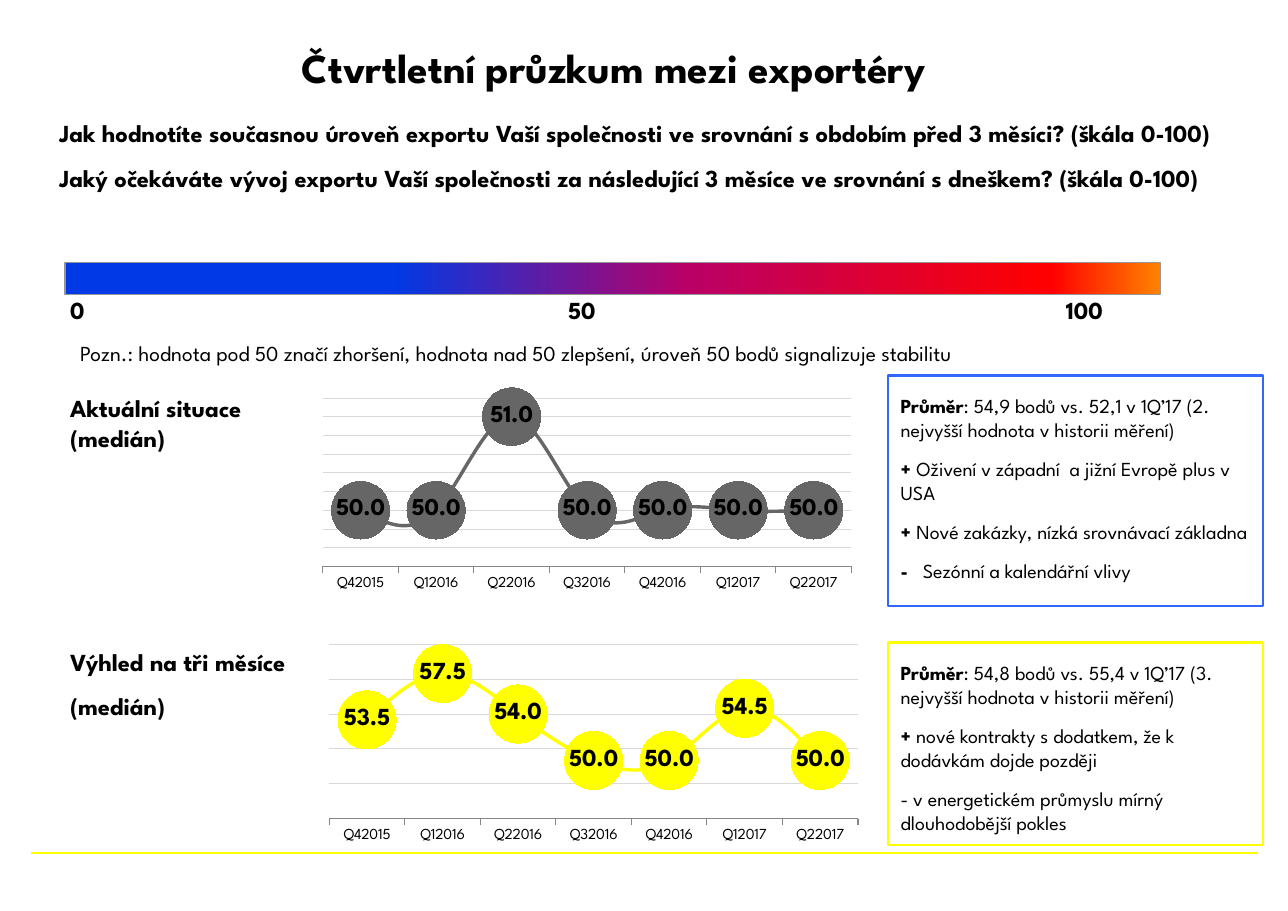
from lxml import etree
from pptx import Presentation
from pptx.chart.data import CategoryChartData
from pptx.dml.color import RGBColor
from pptx.enum import chart as charts, shapes, text
from pptx.oxml import parse_xml
from pptx.oxml.ns import nsdecls, qn
from pptx.util import Cm, Pt

FONT = "League Spartan"
BLACK = RGBColor(0x00, 0x00, 0x00)
YELLOW = RGBColor(0xFF, 0xFF, 0x00)
BLUE = RGBColor(0x33, 0x66, 0xFF)
GREY = RGBColor(0x66, 0x66, 0x66)
SCALE_BORDER = RGBColor(0x96, 0x96, 0x96)
GRID = RGBColor(0xD9, 0xD9, 0xD9)
AXIS = RGBColor(0x86, 0x86, 0x86)
SCALE_STOPS = [(30, "0039E5"), (57, "BA0066"), (90, "FF0000"), (100, "FF8200")]


def write(frame, paragraphs, size, tabs=()):
    frame.word_wrap = True
    frame.vertical_anchor = text.MSO_ANCHOR.TOP
    frame.margin_left = frame.margin_right = Cm(0.3)
    frame.margin_top, frame.margin_bottom = Cm(0.41), 0
    for i, parts in enumerate(paragraphs):
        paragraph = frame.add_paragraph() if i else frame.paragraphs[0]
        paragraph.alignment = text.PP_ALIGN.LEFT
        paragraph.space_before = Pt(10 if i else 0)
        if tabs:
            stops = etree.SubElement(paragraph._p.get_or_add_pPr(), qn("a:tabLst"))
            for tab in tabs:
                etree.SubElement(stops, qn("a:tab"), pos=str(Cm(tab)), algn="l")
        paragraph.font.name = FONT
        paragraph.font.size = Pt(size)
        paragraph.font.color.rgb = BLACK
        for words, bold in parts:
            run = paragraph.add_run()
            run.text = words
            run.font.bold = bold


def add_text(left, top, width, height, paragraphs, size, tabs=()):
    box = slide.shapes.add_textbox(Cm(left), Cm(top), Cm(width), Cm(height))
    write(box.text_frame, paragraphs, size, tabs)


prs = Presentation()
prs.slide_width, prs.slide_height = Cm(29.7), Cm(21)
slide = prs.slides.add_slide(prs.slide_layouts[5])

title = slide.shapes.title
title.left, title.top, title.width, title.height = Cm(6.96), Cm(0.48), Cm(21.56), Cm(2.11)
write(title.text_frame, [[("Čtvrtletní průzkum mezi exportéry", True)]], 27)
title.text_frame.vertical_anchor = text.MSO_ANCHOR.MIDDLE
title.text_frame.margin_left = title.text_frame.margin_right = title.text_frame.margin_top = 0

footer = slide.shapes.add_connector(
    shapes.MSO_CONNECTOR.STRAIGHT, Cm(0.71), Cm(19.66), Cm(29), Cm(19.66))
footer.line.color.rgb = YELLOW
footer.line.width = Pt(1)
etree.SubElement(footer._element.spPr, qn("a:effectLst"))

add_text(1.07, 2.31, 27.58, 3.73, [
    [("Jak hodnotíte současnou úroveň exportu Vaší společnosti ve srovnání s obdobím před 3 měsíci? (škála 0-100)", True)],
    [("Jaký očekáváte vývoj exportu Vaší společnosti za následující 3 měsíce ve srovnání s dneškem? (škála 0-100)", True)],
], 16)

scale = slide.shapes.add_shape(
    shapes.MSO_SHAPE.RECTANGLE, Cm(1.5), Cm(6.05), Cm(25.25), Cm(0.74))
scale.shadow.inherit = False
scale.line.color.rgb = SCALE_BORDER
scale.line.width = Pt(0.75)
scale.fill.gradient()
scale.fill.gradient_angle = 0
stop_list = scale._element.spPr.find(".//" + qn("a:gsLst"))
for stop in list(stop_list):
    stop_list.remove(stop)
for percent, colour in SCALE_STOPS:
    stop = etree.SubElement(stop_list, qn("a:gs"), pos=str(percent * 1000))
    etree.SubElement(stop, qn("a:srgbClr"), val=colour)

add_text(1.32, 6.4, 27.25, 1.5, [[("0\t50\t100", True)]], 16, tabs=(11.48, 22.96))
add_text(1.55, 7.44, 27.5, 1.14, [
    [("Pozn.: hodnota pod 50 značí zhoršení, hodnota nad 50 zlepšení, úroveň 50 bodů signalizuje stabilitu", False)],
], 14)

add_text(1.32, 8.66, 6.25, 2, [[("Aktuální situace (medián)", True)]], 16)
add_text(1.32, 14.5, 6.25, 2.4, [[("Výhled na tři měsíce", True)], [("(medián)", True)]], 16)

comments = [
    (8.66, 5.31, BLUE, [
        [("Průměr", True), (": 54,9 bodů vs. 52,1 v 1Q’17 (2. nejvyšší hodnota v historii měření)", False)],
        [("+ ", True), ("Oživení v západní  a jižní Evropě plus v USA", False)],
        [("+ ", True), ("Nové zakázky, nízká srovnávací základna", False)],
        [("-\t", True), ("Sezónní a kalendářní vlivy", False)],
    ]),
    (14.81, 4.67, YELLOW, [
        [("Průměr", True), (": 54,8 bodů vs. 55,4 v 1Q’17 (3. nejvyšší hodnota v historii měření)", False)],
        [("+", True), (" nové kontrakty s dodatkem, že k dodávkám dojde později", False)],
        [("- v energetickém průmyslu mírný dlouhodobější pokles", False)],
    ]),
]
for top, height, colour, paragraphs in comments:
    comment = slide.shapes.add_shape(
        shapes.MSO_SHAPE.RECTANGLE, Cm(20.47), Cm(top), Cm(8.66), Cm(height))
    comment.shadow.inherit = False
    comment.fill.background()
    comment.line.color.rgb = colour
    comment.line.width = Pt(1.5)
    write(comment.text_frame, paragraphs, 13, tabs=(0.51,))

quarters = ["Q42015", "Q12016", "Q22016", "Q32016", "Q42016", "Q12017", "Q22017"]
medians = [
    (7.19, 8.94, GREY, (50, 50, 51, 50, 50, 50, 50), (49.4, 51.2, 0.2), (0.04, 0.82)),
    (7.34, 14.76, YELLOW, (53.5, 57.5, 54, 50, 50, 54.5, 50), (45, 60, 3), (0.02, 0.84)),
]
for left, top, colour, values, (low, high, step), (plot_top, plot_height) in medians:
    data = CategoryChartData(number_format="0.0")
    data.categories = quarters
    data.add_series("Medián", values)
    chart = slide.shapes.add_chart(
        charts.XL_CHART_TYPE.LINE_MARKERS, Cm(left), Cm(top), Cm(12.7), Cm(4.78), data).chart
    chart.has_legend = False
    chart.has_title = False
    chart.font.name = FONT
    chart.font.size = Pt(10)
    chart.font.color.rgb = BLACK

    chart.category_axis.major_tick_mark = charts.XL_TICK_MARK.OUTSIDE
    chart.category_axis.format.line.color.rgb = AXIS
    axis = chart.value_axis
    axis.minimum_scale, axis.maximum_scale, axis.major_unit = low, high, step
    axis.visible = False
    axis.has_major_gridlines = True
    axis.major_gridlines.format.line.color.rgb = GRID
    axis.major_gridlines.format.line.width = Pt(0.5)

    plot = chart.plots[0]
    plot.vary_by_categories = False
    median = plot.series[0]
    median.smooth = True
    median.format.line.color.rgb = colour
    median.format.line.width = Pt(2.25)
    median.marker.style = charts.XL_MARKER_STYLE.CIRCLE
    median.marker.size = 38
    median.marker.format.fill.solid()
    median.marker.format.fill.fore_color.rgb = colour
    median.marker.format.line.color.rgb = colour

    labels = median.data_labels
    labels.show_value = True
    labels.position = charts.XL_LABEL_POSITION.CENTER
    labels.number_format = "0.0"
    labels.number_format_is_linked = False
    labels.font.name = FONT
    labels.font.size = Pt(16)
    labels.font.bold = True
    labels.font.color.rgb = BLACK

    plot_area = chart._chartSpace.chart.plotArea
    for layout in plot_area.findall(qn("c:layout")):
        plot_area.remove(layout)
    plot_area.insert(0, parse_xml(
        f'<c:layout {nsdecls("c")}><c:manualLayout><c:layoutTarget val="inner"/>'
        '<c:xMode val="edge"/><c:yMode val="edge"/>'
        f'<c:x val="0.02"/><c:y val="{plot_top}"/><c:w val="0.96"/><c:h val="{plot_height}"/>'
        '</c:manualLayout></c:layout>'))

prs.save("out.pptx")
